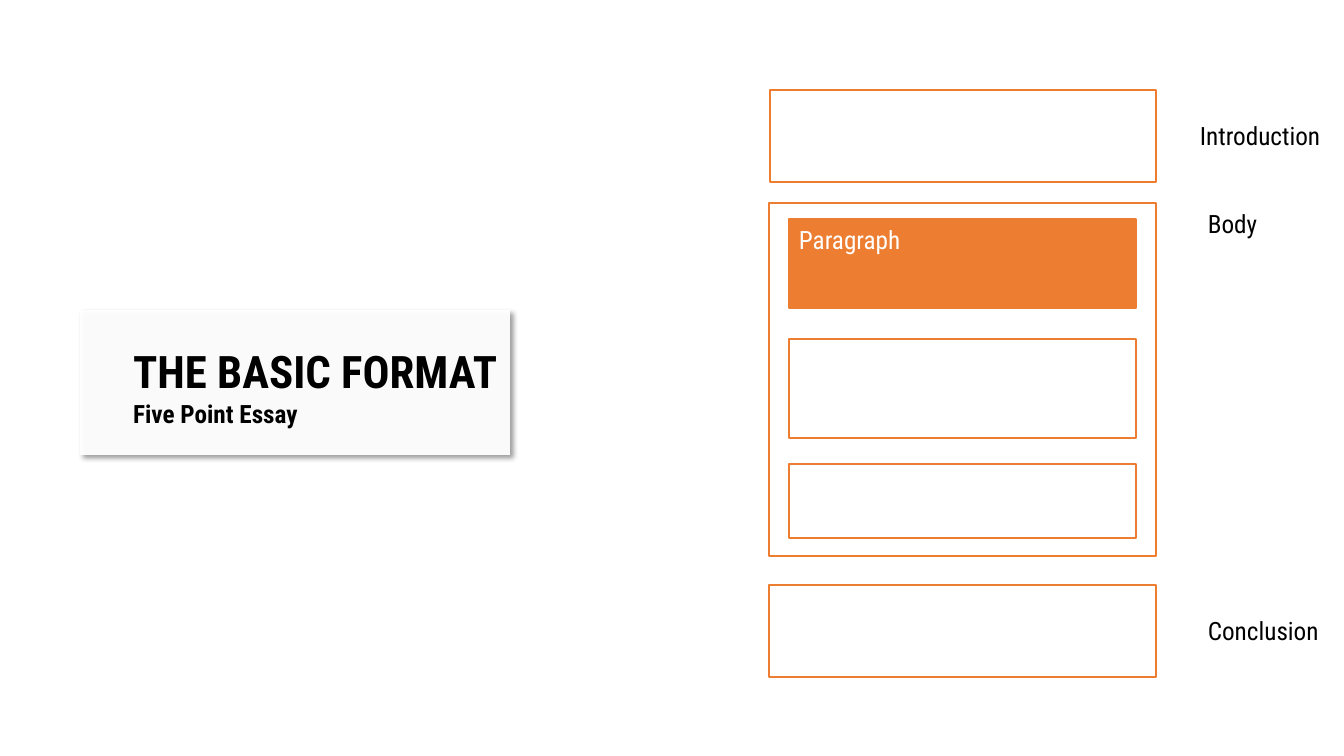
from lxml import etree
from pptx import Presentation
from pptx.dml.color import RGBColor
from pptx.enum.shapes import MSO_SHAPE as Shape
from pptx.enum.text import MSO_ANCHOR as Anchor, MSO_AUTO_SIZE as AutoSize, PP_ALIGN as Align
from pptx.oxml import parse_xml
from pptx.oxml.ns import nsdecls, qn
from pptx.util import Emu, Pt

EMU_PER_PX = 914400 / 100.8


def px(length):
    return Emu(round(length * EMU_PER_PX))


def color(value):
    return RGBColor.from_string(value)


class EssaySlide:
    FONT = "Roboto Condensed"
    BLACK, WHITE, ORANGE = "000000", "FFFFFF", "ED7D31"

    def __init__(self, presentation):
        self.slide = presentation.slides.add_slide(presentation.slide_layouts[5])
        self.shapes = self.slide.shapes

    def format_run(self, paragraph, size, value, bold=False):
        for run in paragraph.runs:
            run.font.name = self.FONT
            run.font.size = Pt(size)
            run.font.bold = bold
            run.font.color.rgb = color(value)

    def box(self, left, top, width, height, fill=WHITE):
        shape = self.shapes.add_shape(Shape.RECTANGLE, *map(px, (left, top, width, height)))
        shape.shadow.inherit = False
        shape.fill.solid()
        shape.fill.fore_color.rgb = color(fill)
        shape.line.color.rgb = color(self.ORANGE)
        shape.line.width = Pt(1)
        return shape

    def card(self, left, top, width, height):
        shape = self.box(left, top, width, height)
        shape.line.fill.background()
        properties = shape._element.spPr
        fill = properties.find(qn("a:solidFill")).find(qn("a:srgbClr"))
        etree.SubElement(fill, qn("a:alpha"), val="95000")
        properties.find(qn("a:effectLst")).append(parse_xml(
            f'<a:outerShdw {nsdecls("a")} blurRad="{Pt(4)}" dist="{Pt(3)}" '
            'dir="2700000" algn="tl" rotWithShape="0">'
            f'<a:srgbClr val="{self.BLACK}"><a:alpha val="40000"/></a:srgbClr></a:outerShdw>'))

    def title(self, left, top, width, height, heading, subheading):
        title = self.shapes.title
        title.left, title.top, title.width, title.height = map(px, (left, top, width, height))
        frame = title.text_frame
        frame.text = f"{heading}\n{subheading}"
        frame.word_wrap = True
        frame.auto_size = AutoSize.SHAPE_TO_FIT_TEXT
        frame.vertical_anchor = Anchor.TOP
        for paragraph, size in zip(frame.paragraphs, (32, 18)):
            paragraph.alignment = Align.LEFT
            self.format_run(paragraph, size, self.BLACK, bold=True)
        # Bring the title in front of its card
        self.shapes._spTree.append(title._element)

    def label(self, left, top, text, value=BLACK):
        text_box = self.shapes.add_textbox(*map(px, (left, top, 175, 40)))
        frame = text_box.text_frame
        frame.text = text
        frame.word_wrap = True
        frame.auto_size = AutoSize.SHAPE_TO_FIT_TEXT
        self.format_run(frame.paragraphs[0], 18, value)


def main():
    presentation = Presentation()
    presentation.slide_width, presentation.slide_height = px(1344), px(756)
    essay = EssaySlide(presentation)

    # Title card
    essay.card(80, 310, 430, 145)
    essay.title(123, 339, 514, 95, "THE BASIC FORMAT", "Five Point Essay")

    # Essay sections
    essay.box(770, 90, 386, 92)
    essay.box(769, 203, 387, 353)
    essay.box(769, 585, 387, 92)

    # Paragraphs inside the body
    for top, height, fill in ((219, 89, essay.ORANGE), (339, 99, essay.WHITE),
                              (464, 74, essay.WHITE)):
        essay.box(789, top, 347, height, fill)
    essay.label(789, 219, "Paragraph", essay.WHITE)

    # Section labels
    for left, top, text in ((1190, 115, "Introduction"), (1198, 203, "Body"),
                            (1198, 610, "Conclusion")):
        essay.label(left, top, text)

    presentation.save("out.pptx")


if __name__ == "__main__":
    main()
